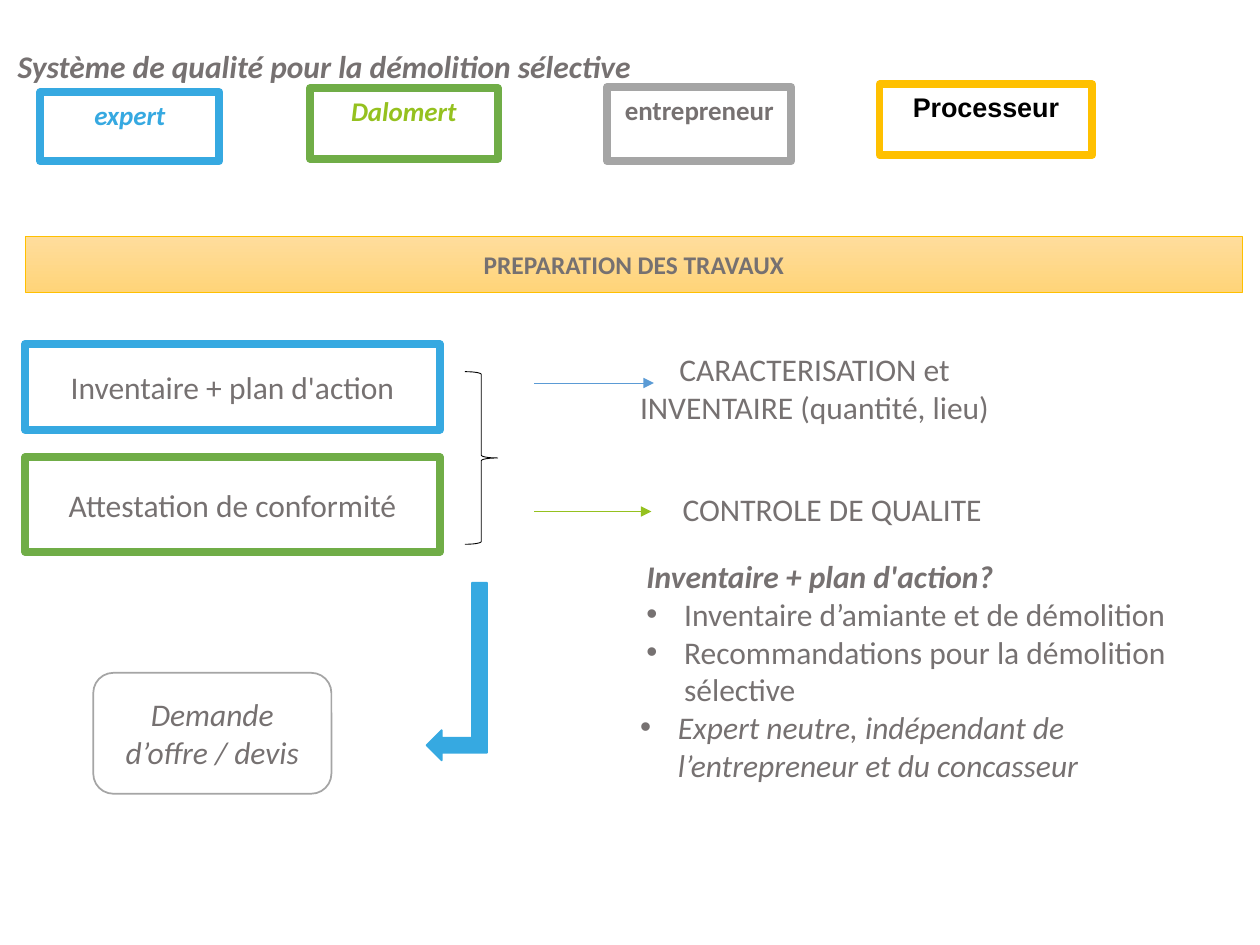
"""Build the slide on the quality system for selective demolition."""
import pptx
import pptx.util
import pptx.dml.color
import pptx.enum.shapes
import pptx.enum.text
import pptx.oxml.ns
from lxml import etree

Inches = pptx.util.Inches
Pt = pptx.util.Pt
MSO = pptx.enum.shapes.MSO_SHAPE
ALIGN = pptx.enum.text.PP_ALIGN
ANCHOR = pptx.enum.text.MSO_ANCHOR
RGB = pptx.dml.color.RGBColor.from_string
qn = pptx.oxml.ns.qn

COLORS = {
    "text": "767171", "black": "000000", "white": "FFFFFF", "blue": "36A9E1",
    "green": "70AD47", "lime": "95C11F", "grey": "A5A5A5", "gold": "FFC000",
    "steel": "5B9BD5", "band_top": "FFDD9C", "band_bottom": "FFD479",
}


def format_text(p, size=18, color="text", bold=False, italic=False, font="Calibri"):
    """Format every run of a paragraph."""
    for r in p.runs:
        r.font.size = Pt(size)
        r.font.name = font
        r.font.bold = bold
        r.font.italic = italic
        r.font.color.rgb = RGB(COLORS[color])


def add_box(kind, box, text="", fill="white", line=None, width=4.5,
            anchor=ANCHOR.MIDDLE, **style):
    """Add a preset shape with centred text."""
    sp = slide.shapes.add_shape(kind, *[Inches(v) for v in box])
    sp.shadow.inherit = False
    if fill:
        sp.fill.solid()
        sp.fill.fore_color.rgb = RGB(COLORS[fill])
    else:
        sp.fill.background()
    if line:
        sp.line.color.rgb = RGB(COLORS[line])
        sp.line.width = Pt(width)
    else:
        sp.line.fill.background()
    if text:
        tf = sp.text_frame
        tf.text = text
        tf.word_wrap = True
        tf.vertical_anchor = anchor
        tf.paragraphs[0].alignment = ALIGN.CENTER
        format_text(tf.paragraphs[0], **style)
    return sp


prs = pptx.Presentation()
prs.slide_width = Inches(10)
prs.slide_height = Inches(7.5)
slide = prs.slides.add_slide(prs.slide_layouts[3])
title, details, expert_note = slide.placeholders

title.text_frame.text = "Système de qualité pour la démolition sélective"
title.text_frame.paragraphs[0].alignment = ALIGN.LEFT
format_text(title.text_frame.paragraphs[0], bold=True, italic=True)
details.text_frame.text = (
    "Inventaire + plan d'action?\n"
    "Inventaire d’amiante et de démolition\n"
    "Recommandations pour la démolition sélective"
)
expert_note.text_frame.text = "Expert neutre, indépendant de l’entrepreneur et du concasseur"

for sp, box in [
    (title, (0.04, 0.32, 5.11, 0.7)),
    (details, (5.03, 4.37, 4.88, 1.31)),
    (expert_note, (4.98, 5.57, 4.88, 0.7)),
]:
    sp.left, sp.top, sp.width, sp.height = [Inches(v) for v in box]
    tf = sp.text_frame
    tf.auto_size = pptx.enum.text.MSO_AUTO_SIZE.NONE
    tf.vertical_anchor = ANCHOR.TOP
    tf.word_wrap = True

for sp in (details, expert_note):
    for i, p in enumerate(sp.text_frame.paragraphs):
        heading = sp is details and i == 0
        p.space_before = Pt(0)
        pPr = p._p.get_or_add_pPr()
        indent = 0 if heading else Inches(0.3)
        pPr.set("marL", str(indent))
        pPr.set("indent", str(-indent))
        if heading:
            etree.SubElement(pPr, qn("a:buNone"))
        else:
            etree.SubElement(pPr, qn("a:buChar")).set("char", "•")
        format_text(p, bold=heading, italic=heading or sp is expert_note)

band = add_box(MSO.RECTANGLE, (0.2, 1.88, 9.66, 0.44), "PREPARATION DES TRAVAUX",
               line="gold", width=0.5, size=14.5, bold=True)
band.fill.gradient()
band.fill.gradient_angle = 270
for stop, color in zip(band.fill.gradient_stops, ("band_top", "band_bottom")):
    stop.color.rgb = RGB(COLORS[color])

for text, box, line, color, italic, font in [
    ("expert", (0.32, 0.73, 1.42, 0.55), "blue", "blue", True, "Calibri"),
    ("Dalomert", (2.46, 0.7, 1.49, 0.56), "green", "lime", True, "Calibri"),
    ("entrepreneur", (4.82, 0.69, 1.46, 0.59), "grey", "text", False, "Calibri"),
    ("Processeur", (6.98, 0.67, 1.69, 0.56), "gold", "black", False, "Arial"),
]:
    add_box(MSO.RECTANGLE, box, text, line=line, anchor=ANCHOR.TOP, size=15.4,
            color=color, bold=True, italic=italic, font=font)

for text, box, line in [
    ("Inventaire + plan d'action", (0.2, 2.73, 3.29, 0.68), "blue"),
    ("Attestation de conformité", (0.2, 3.63, 3.29, 0.75), "green"),
    ("CARACTERISATION et INVENTAIRE (quantité, lieu)", (4.82, 2.73, 3.29, 0.7), None),
    ("CONTROLE DE QUALITE", (4.96, 3.84, 3.29, 0.4), None),
]:
    add_box(MSO.RECTANGLE, box, text, line=line)

add_box(MSO.ROUNDED_RECTANGLE, (0.74, 5.34, 1.89, 0.96), "Demande d’offre / devis",
        line="grey", width=1, italic=True)
add_box(MSO.RIGHT_BRACE, (3.69, 2.95, 0.26, 1.37), fill=None, line="black", width=0.5)

arrow = add_box(MSO.BENT_UP_ARROW, (2.92, 5.09, 1.41, 0.48), fill="blue",
                line="blue", width=1)
arrow.rotation = 270
arrow._element.spPr.find(qn("a:xfrm")).set("flipH", "1")

for y, end, color in [(3.04, 5.19, "steel"), (4.06, 5.17, "lime")]:
    cxn = slide.shapes.add_connector(
        pptx.enum.shapes.MSO_CONNECTOR.STRAIGHT,
        Inches(4.24), Inches(y), Inches(end), Inches(y))
    cxn.line.color.rgb = RGB(COLORS[color])
    cxn.line.width = Pt(0.5)
    etree.SubElement(cxn.line._get_or_add_ln(), qn("a:tailEnd")).set("type", "triangle")
    etree.SubElement(cxn._element.spPr, qn("a:effectLst"))

prs.save("out.pptx")
